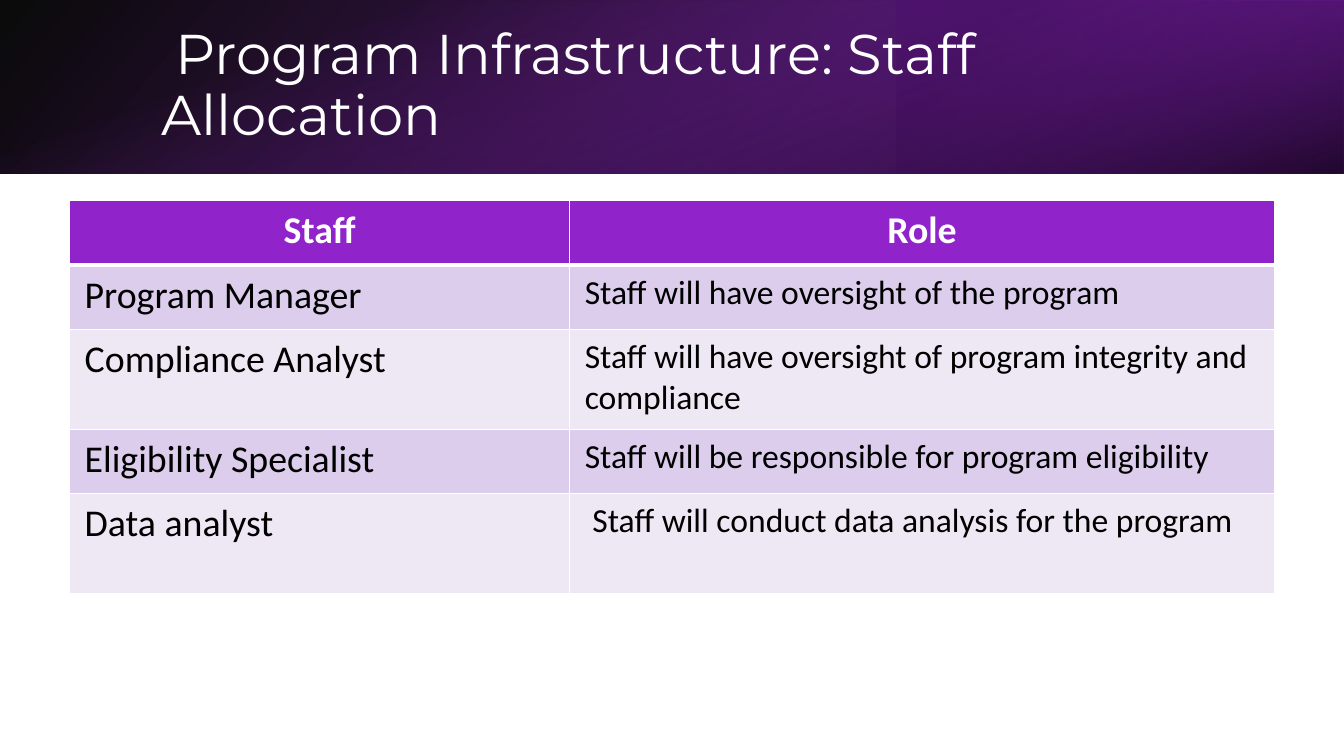
from pptx import Presentation
from pptx.dml.color import RGBColor
from pptx.enum.shapes import MSO_SHAPE as Shape
from pptx.enum.text import MSO_ANCHOR as Anchor, PP_ALIGN as Align
from pptx.oxml import parse_xml
from pptx.oxml.ns import nsdecls, qn
from pptx.util import Inches, Pt
from lxml.etree import SubElement

WHITE = RGBColor(0xFF, 0xFF, 0xFF)
BLACK = RGBColor(0, 0, 0)
PURPLE = RGBColor(0x90, 0x23, 0xC9)
PLUM = RGBColor(0x6C, 0x1A, 0x97)
INDIGO = RGBColor(0x48, 0x12, 0x64)
LILAC = RGBColor(0xDB, 0xCD, 0xEB)
PALE = RGBColor(0xEE, 0xE8, 0xF5)

deck = Presentation()
deck.slide_width = Inches(13.33)
deck.slide_height = Inches(7.5)
slide = deck.slides.add_slide(deck.slide_layouts[6])

layers = [
    ((0, 0, 13.33, 1.72), 0, True, 140, [(0, BLACK, 96), (100, PLUM, 100)]),
    ((8.89, 0, 4.44, 1.72), 180, True, 320, [(19, INDIGO, 68), (100, PURPLE, 79)]),
    ((5.8, -5.8, 1.72, 13.33), 90, False, 340, [(23, PURPLE, 0), (99, BLACK, 74)]),
]
layers[0][4][1] = (100, PLUM, 97)
for area, turn, flip, angle, stops in layers:
    band = slide.shapes.add_shape(Shape.RECTANGLE, *map(Inches, area))
    band.shadow.inherit = False
    band.line.fill.background()
    band.rotation = turn
    props = band._element.spPr
    if flip:
        props.find(qn("a:xfrm")).set("flipH", "1")
    band.fill.gradient()
    band.fill.gradient_angle = 360 - angle
    for stop, (place, color, _) in zip(band.fill.gradient_stops, stops):
        stop.position = place / 100
        stop.color.rgb = color
    for node, (_, _, alpha) in zip(props.iter(qn("a:srgbClr")), stops):
        SubElement(node, qn("a:alpha")).set("val", str(alpha * 1000))

title = slide.shapes.add_textbox(Inches(1.5), Inches(0.38), Inches(10.98), Inches(0.96))
frame = title.text_frame
frame.word_wrap = True
frame.vertical_anchor = Anchor.MIDDLE
head = frame.paragraphs[0]
head.text = " Program Infrastructure: Staff Allocation"
head.line_spacing = 0.9
head.font.name = "Montserrat"
head.font.size = Pt(40)
head.font.color.rgb = WHITE

rows = [
    (0.64, "Staff", "Role"),
    (0.64, "Program Manager", "Staff will have oversight of the program"),
    (0.99, "Compliance Analyst", "Staff will have oversight of program integrity and compliance"),
    (0.64, "Eligibility Specialist", "Staff will be responsible for program eligibility"),
    (0.99, "Data analyst", " Staff will conduct data analysis for the program"),
]
table = slide.shapes.add_table(
    len(rows), 2, Inches(0.69), Inches(1.99), Inches(11.95), Inches(3.9)).table
for column, width in zip(table.columns, (4.96, 6.99)):
    column.width = Inches(width)

for r, (height, *texts) in enumerate(rows):
    table.rows[r].height = Inches(height)
    top = r == 0
    for c, text in enumerate(texts):
        cell = table.cell(r, c)
        cell.margin_left = cell.margin_right = Inches(0.15)
        cell.margin_top = cell.margin_bottom = Inches(0.07)
        for side in "LRTB":
            thick = (r, side) in ((0, "B"), (1, "T"))
            cell._tc.get_or_add_tcPr().append(parse_xml(
                f'<a:ln{side} {nsdecls("a")} w="{Pt(3 if thick else 1)}"><a:solidFill>'
                f'<a:srgbClr val="{WHITE}"/></a:solidFill></a:ln{side}>'))
        cell.fill.solid()
        cell.fill.fore_color.rgb = PURPLE if top else LILAC if r % 2 else PALE
        para = cell.text_frame.paragraphs[0]
        para.text = text
        para.alignment = Align.CENTER if top else Align.LEFT
        para.font.name = "Calibri"
        para.font.size = Pt(27 if top or c == 0 else 24)
        para.font.bold = top
        para.font.color.rgb = WHITE if top else BLACK

deck.save("out.pptx")
